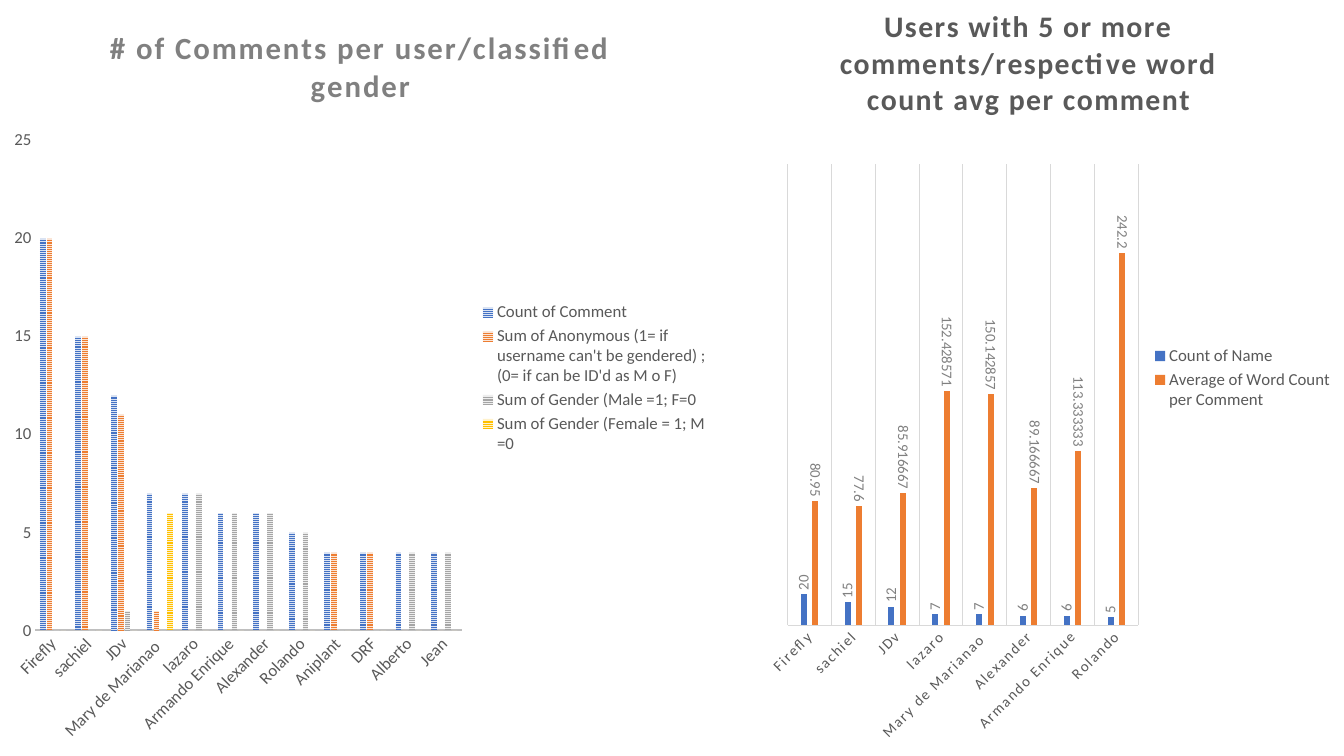
"""Slide with two column charts about comments per user."""
from lxml import etree
from pptx import Presentation
from pptx.chart.data import CategoryChartData
from pptx.dml.color import RGBColor
from pptx.enum.chart import XL_CHART_TYPE, XL_LABEL_POSITION, XL_LEGEND_POSITION, XL_TICK_MARK
from pptx.enum.dml import MSO_PATTERN
from pptx.oxml.ns import qn
from pptx.util import Inches, Pt

COLUMNS = XL_CHART_TYPE.COLUMN_CLUSTERED
OUTSIDE_END = XL_LABEL_POSITION.OUTSIDE_END
RIGHT = XL_LEGEND_POSITION.RIGHT
NO_TICK = XL_TICK_MARK.NONE
NARROW_STRIPES = MSO_PATTERN.NARROW_HORIZONTAL

BLUE = RGBColor(0x44, 0x72, 0xC4)
ORANGE = RGBColor(0xED, 0x7D, 0x31)
GRAY = RGBColor(0xA5, 0xA5, 0xA5)
GOLD = RGBColor(0xFF, 0xC0, 0x00)
PALE_BLUE = RGBColor(0xDA, 0xE3, 0xF3)
PALE_ORANGE = RGBColor(0xFB, 0xE5, 0xD6)
PALE_GRAY = RGBColor(0xED, 0xED, 0xED)
PALE_GOLD = RGBColor(0xFF, 0xF2, 0xCC)
BLACK = RGBColor(0x00, 0x00, 0x00)
TEXT = RGBColor(0x59, 0x59, 0x59)
SOFT_TEXT = RGBColor(0x80, 0x80, 0x80)
AXIS_LINE = RGBColor(0xBF, 0xBF, 0xBF)
GRID_LINE = RGBColor(0xD9, 0xD9, 0xD9)


def style(font, size, color, bold=False, spacing=0):
    font.name = "Calibri"
    font.size = Pt(size)
    font.color.rgb = color
    font.bold = bold
    if spacing:
        font._element.set("spc", str(spacing))


def add_columns(left, width, title, title_style, title_at, plot_at, names, rows, top, gap, overlap):
    data = CategoryChartData()
    data.categories = names
    for label, values in rows:
        data.add_series(label, values)
    chart = slide.shapes.add_chart(
        COLUMNS, Inches(left), 0, Inches(width), presentation.slide_height, data).chart
    style(chart.font, 10, BLACK)

    chart.has_title = True
    heading = chart.chart_title.text_frame.paragraphs[0].add_run()
    heading.text = title
    style(heading.font, *title_style)

    chart.has_legend = True
    chart.legend.position = RIGHT
    chart.legend.include_in_layout = False
    style(chart.legend.font, 12, TEXT)

    chart.plots[0].gap_width = gap
    chart.plots[0].overlap = overlap
    chart.plots[0].vary_by_categories = False
    chart.value_axis.minimum_scale = 0
    chart.value_axis.maximum_scale = top
    chart.value_axis.has_major_gridlines = False
    for axis in (chart.category_axis, chart.value_axis):
        axis.major_tick_mark = NO_TICK
        style(axis.tick_labels.font, 12, TEXT)
    chart.category_axis._element.find(qn("c:txPr")).find(qn("a:bodyPr")).set("rot", "-2700000")

    plot_area = chart._chartSpace.chart.plotArea
    for parent, index, place in ((chart.chart_title._element, 1, title_at), (plot_area, 0, plot_at)):
        for old in parent.findall(qn("c:layout")):
            parent.remove(old)
        layout = etree.Element(qn("c:layout"))
        manual = etree.SubElement(layout, qn("c:manualLayout"))
        if parent is plot_area:
            etree.SubElement(manual, qn("c:layoutTarget")).set("val", "inner")
        for tag in ("xMode", "yMode"):
            etree.SubElement(manual, qn(f"c:{tag}")).set("val", "edge")
        for tag, share in zip("xywh", place):
            etree.SubElement(manual, qn(f"c:{tag}")).set("val", str(share))
        parent.insert(index, layout)
    return chart


presentation = Presentation()
presentation.slide_width = Inches(13.33)
presentation.slide_height = Inches(7.5)
slide = presentation.slides.add_slide(presentation.slide_layouts[6])

gender_chart = add_columns(
    0, 7.14, "# of Comments per user/classified gender", (22, SOFT_TEXT, True, 150),
    (0.145, 0.028), (0.049, 0.185, 0.593, 0.649),
    ["Firefly", "sachiel", "JDv", "Mary de Marianao ", "lazaro", "Armando Enrique",
     "Alexander", "Rolando", "Aniplant", "DRF", "Alberto", "Jean"],
    [("Count of Comment", (20, 15, 12, 7, 7, 6, 6, 5, 4, 4, 4, 4)),
     ("Sum of Anonymous (1= if username can't be gendered) ; (0= if can be ID'd as M o F)",
      (20, 15, 11, 1, 0, 0, 0, 0, 4, 4, 0, 0)),
     ("Sum of Gender (Male =1; F=0", (0, 0, 1, 0, 7, 6, 6, 5, 0, 0, 4, 4)),
     ("Sum of Gender (Female = 1; M =0 ", (0, 0, 0, 6, 0, 0, 0, 0, 0, 0, 0, 0))],
    25, 164, -22)
gender_chart.value_axis.major_unit = 5
gender_chart.value_axis.format.line.fill.background()
gender_chart.category_axis.format.line.color.rgb = AXIS_LINE
gender_chart.category_axis.format.line.width = Pt(1.5)
stripes = ((BLUE, PALE_BLUE), (ORANGE, PALE_ORANGE), (GRAY, PALE_GRAY), (GOLD, PALE_GOLD))
for series, (dark, pale) in zip(gender_chart.plots[0].series, stripes):
    fill = series.format.fill
    fill.patterned()
    fill.pattern = NARROW_STRIPES
    fill.fore_color.rgb = dark
    fill.back_color.rgb = pale

words_chart = add_columns(
    7.52, 5.81, "Users with 5 or more comments/respective word count avg per comment",
    (21.3, TEXT, True, 120),
    (0.13, 0), (0.05, 0.217, 0.599, 0.61),
    ["Firefly", "sachiel", "JDv", "lazaro", "Mary de Marianao ", "Alexander",
     "Armando Enrique", "Rolando"],
    [("Count of Name", (20, 15, 12, 7, 7, 6, 6, 5)),
     ("Average of Word Count per Comment",
      (80.95, 77.6, 85.916667, 152.428571, 150.142857, 89.166667, 113.333333, 242.2))],
    300, 444, -90)
words_chart.value_axis.visible = False
users = words_chart.category_axis
users.has_major_gridlines = True
for line in (users.format.line, users.major_gridlines.format.line):
    line.color.rgb = GRID_LINE
    line.width = Pt(0.75)
style(users.tick_labels.font, 10.6, TEXT, spacing=120)
for series, color, turn in zip(words_chart.plots[0].series, (BLUE, ORANGE), (-5400000, 5400000)):
    series.format.fill.solid()
    series.format.fill.fore_color.rgb = color
    labels = series.data_labels
    labels.show_value = True
    labels.position = OUTSIDE_END
    style(labels.font, 10.6, SOFT_TEXT)
    labels._element.find(qn("c:txPr")).find(qn("a:bodyPr")).set("rot", str(turn))

presentation.save("out.pptx")
